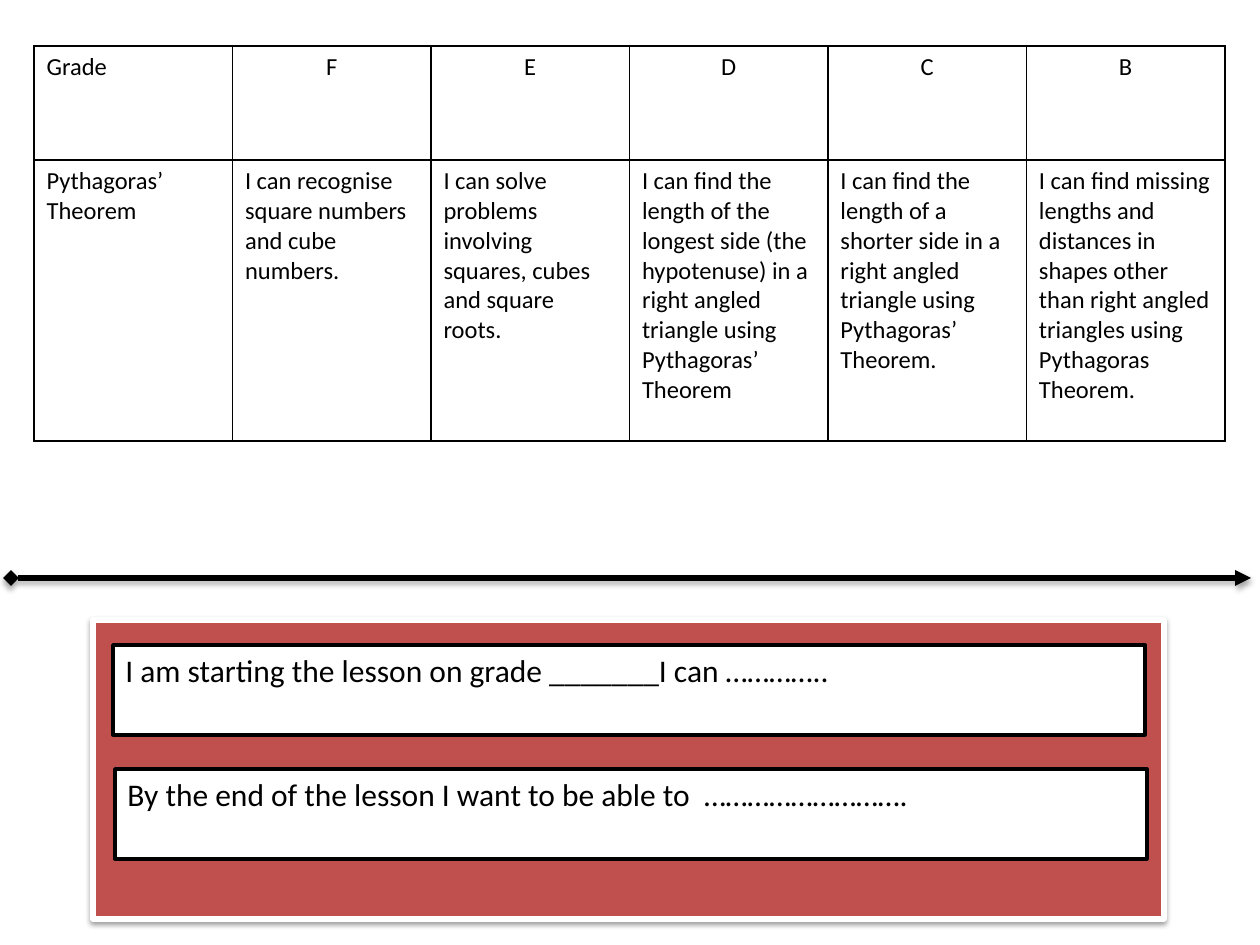
from dataclasses import dataclass

from lxml import etree
from pptx import Presentation
from pptx.dml.color import RGBColor
from pptx.enum.shapes import MSO_CONNECTOR as Connector, MSO_SHAPE as Preset
from pptx.enum.text import MSO_ANCHOR as Anchor, PP_ALIGN as Align
from pptx.oxml.ns import qn
from pptx.util import Emu, Pt

PX_PER_INCH = 126
BLACK, WHITE, RED = "000000", "FFFFFF", "C0504D"
GRADES = ["Grade", "F", "E", "D", "C", "B"]
SKILLS = [
    "Pythagoras’ Theorem",
    "I can recognise square numbers and cube numbers.",
    "I can solve problems involving squares, cubes and square roots.",
    "I can find the length of the longest side (the hypotenuse) in a right "
    "angled triangle using Pythagoras’ Theorem",
    "I can find the length of a shorter side in a right angled triangle using "
    "Pythagoras’ Theorem.",
    "I can find missing lengths and distances in shapes other than right "
    "angled triangles using Pythagoras Theorem.",
]


@dataclass(frozen=True)
class Shadow:
    """A shadow straight below; blur and distance in points."""
    opacity: int
    blur: float
    distance: float


@dataclass(frozen=True)
class Box:
    left: int
    top: int
    width: int
    height: int
    fill: str
    line: str
    weight: float
    text: str = ""
    shadow: Shadow | None = None


BOXES = [
    Box(93, 620, 1071, 299, RED, WHITE, 3, shadow=Shadow(38, 3.1, 1.6)),
    Box(113, 645, 1032, 90, WHITE, BLACK, 2,
        "I am starting the lesson on grade _______I can ………….."),
    Box(115, 769, 1032, 90, WHITE, BLACK, 2,
        "By the end of the lesson I want to be able to  ………………………."),
]


def px(value: float) -> Emu:
    return Emu(round(value * 914400 / PX_PER_INCH))


def color(value: str) -> RGBColor:
    return RGBColor.from_string(value)


def add_child(parent, tag: str, **attributes):
    return etree.SubElement(parent, qn(tag),
                            {name: str(value) for name, value in attributes.items()})


def set_line(line, line_color: str, weight: float) -> None:
    line.color.rgb = color(line_color)
    line.width = Pt(weight)


def set_shadow(shape, shadow: Shadow) -> None:
    effects = add_child(shape._element.spPr, "a:effectLst")
    outer = add_child(effects, "a:outerShdw", blurRad=Pt(shadow.blur),
                      dist=Pt(shadow.distance), dir=90 * 60000, rotWithShape=0)
    shade = add_child(outer, "a:srgbClr", val=BLACK)
    add_child(shade, "a:alpha", val=shadow.opacity * 1000)


def write(text_frame, text: str, size: int, align: Align = Align.LEFT) -> None:
    paragraph = text_frame.paragraphs[0]
    paragraph.alignment = align
    run = paragraph.add_run()
    run.text = text
    for name, value in {"name": "Calibri", "size": Pt(size), "bold": False}.items():
        setattr(run.font, name, value)
    run.font.color.rgb = color(BLACK)


def add_borders(cell) -> None:
    properties = cell._tc.get_or_add_tcPr()
    for position, side in enumerate(("a:lnL", "a:lnR", "a:lnT", "a:lnB")):
        border = add_child(properties, side, w=Pt(1))
        add_child(add_child(border, "a:solidFill"), "a:srgbClr", val=BLACK)
        properties.insert(position, border)


def add_grade_table(slide) -> None:
    left, top, width, row_heights = 34, 46, 1191, (114, 281)
    table = slide.shapes.add_table(
        len(row_heights), len(GRADES),
        px(left), px(top), px(width), px(sum(row_heights))).table
    table.first_row = table.horz_banding = False
    for column in table.columns:
        column.width = px(width / len(GRADES))
    for row, height in zip(table.rows, row_heights):
        row.height = px(height)
    for row_index, texts in enumerate((GRADES, SKILLS)):
        for column_index, text in enumerate(texts):
            cell = table.cell(row_index, column_index)
            cell.fill.background()
            add_borders(cell)
            is_grade = row_index == 0 and column_index > 0
            write(cell.text_frame, text, 14, Align.CENTER if is_grade else Align.LEFT)


def add_box(slide, box: Box) -> None:
    shape = slide.shapes.add_shape(
        Preset.RECTANGLE, px(box.left), px(box.top), px(box.width), px(box.height))
    shape.fill.solid()
    shape.fill.fore_color.rgb = color(box.fill)
    set_line(shape.line, box.line, box.weight)
    if box.shadow:
        set_shadow(shape, box.shadow)
    else:
        shape.shadow.inherit = False
    if box.text:
        shape.text_frame.word_wrap = True
        shape.text_frame.vertical_anchor = Anchor.TOP
        write(shape.text_frame, box.text, 18)


def add_progress_arrow(slide) -> None:
    arrow = slide.shapes.add_connector(
        Connector.STRAIGHT, px(11), px(578), px(1251), px(578))
    set_line(arrow.line, BLACK, 3)
    line = arrow.line._get_or_add_ln()
    add_child(line, "a:headEnd", type="diamond")
    add_child(line, "a:tailEnd", type="triangle")
    set_shadow(arrow, Shadow(35, 3.1, 1.8))


def main() -> None:
    presentation = Presentation()
    presentation.slide_width, presentation.slide_height = px(1260), px(945)
    slide = presentation.slides.add_slide(presentation.slide_layouts[6])
    add_grade_table(slide)
    for box in BOXES:
        add_box(slide, box)
    add_progress_arrow(slide)
    presentation.save("out.pptx")


if __name__ == "__main__":
    main()
